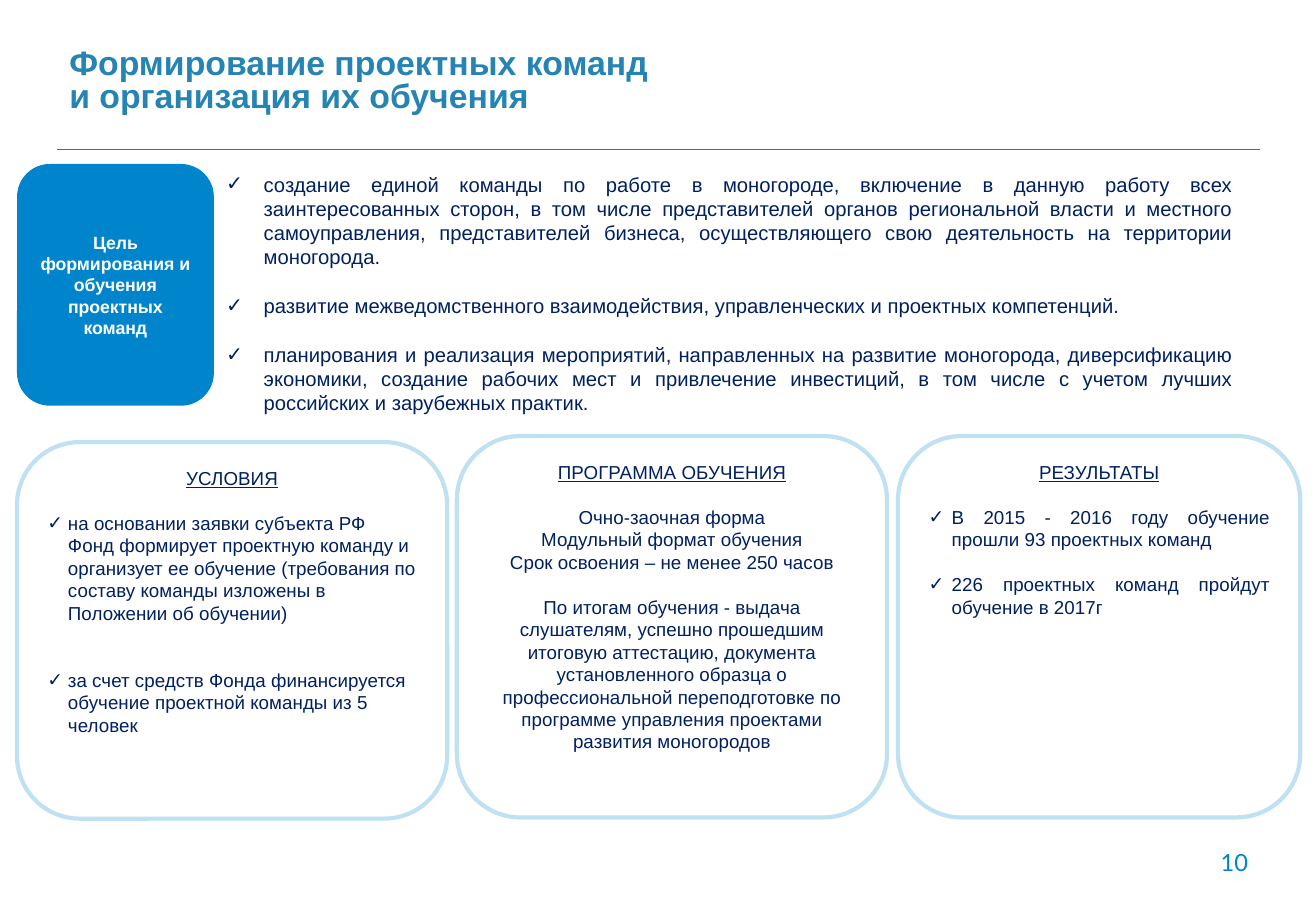
from lxml import etree
from pptx import Presentation
from pptx import util as u
from pptx.dml.color import RGBColor
from pptx.enum import shapes, text
from pptx.oxml import ns

BLUE, NAVY, PALE, WHITE = "0085CD", "002060", "BFE1F2", "FFFFFF"
LEFT, MID = text.PP_ALIGN.LEFT, text.PP_ALIGN.CENTER
RIGHT, FULL = text.PP_ALIGN.RIGHT, text.PP_ALIGN.JUSTIFY


def tint(code):
    return RGBColor.from_string(code)


class Page:
    def __init__(self, deck):
        self.slide = deck.slides.add_slide(deck.slide_layouts[1])
        self.items = self.slide.shapes
        self.face = "Arial"

    def place(self, item, spot):
        item.left, item.top, item.width, item.height = map(u.Inches, spot)

    def frame(self, item, anchor, side=0.1):
        frame = item.text_frame
        frame.word_wrap = True
        frame.auto_size = text.MSO_AUTO_SIZE.NONE
        frame.vertical_anchor = anchor
        frame.margin_left = frame.margin_right = u.Inches(side)
        frame.margin_top = frame.margin_bottom = u.Inches(0.05)
        return frame

    def run(self, para, words, size, color, bold=False, under=False, face=None):
        run = para.add_run()
        run.text = words
        font = run.font
        font.name, font.size = face or self.face, u.Pt(size)
        font.color.rgb = tint(color)
        font.bold, font.underline = bold, under

    def para(self, frame, align, gap=0, dent=0):
        first = frame.paragraphs[0]
        para = frame.add_paragraph() if first.runs else first
        para.alignment = align
        para.space_before = u.Pt(gap)
        if dent:
            props = para._p.get_or_add_pPr()
            props.set("marL", str(u.Inches(dent)))
            props.set("indent", str(-u.Inches(dent)))
            etree.SubElement(props, ns.qn("a:buFont")).set("typeface", self.face)
            etree.SubElement(props, ns.qn("a:buChar")).set("char", "✓")
        return para

    def title(self, spot, lines):
        item = self.items.title
        self.place(item, spot)
        para = self.para(self.frame(item, text.MSO_ANCHOR.TOP), LEFT)
        para.line_spacing = 0.8
        for i, line in enumerate(lines):
            if i:
                para.add_line_break()
            self.run(para, line, 20, "2584B4", bold=True)

    def goals(self, spot, lines):
        item = self.slide.placeholders[1]
        self.place(item, spot)
        frame = self.frame(item, text.MSO_ANCHOR.MIDDLE, 0.22)
        for i, line in enumerate(lines):
            self.run(self.para(frame, FULL, 14.4 if i else 0, 0.31), line, 12, NAVY)

    def rule(self, left, right, top):
        line = self.items.add_connector(
            shapes.MSO_CONNECTOR.STRAIGHT,
            *map(u.Inches, (left, top, right, top)))
        line.line.color.rgb = tint(BLUE)
        line.line.width = u.Pt(1)
        etree.SubElement(line._element.spPr, ns.qn("a:effectLst"))

    def box(self, spot, fill, edge=None):
        item = self.items.add_shape(
            shapes.MSO_SHAPE.ROUNDED_RECTANGLE, *map(u.Inches, spot))
        item.shadow.inherit = False
        item.fill.solid()
        item.fill.fore_color.rgb = tint(fill)
        if edge:
            item.line.color.rgb = tint(edge)
            item.line.width = u.Pt(2.5)
        else:
            item.line.fill.background()
        return item

    def badge(self, spot, words):
        frame = self.frame(self.box(spot, BLUE), text.MSO_ANCHOR.MIDDLE)
        self.run(self.para(frame, MID), words, 10.5, WHITE, bold=True)

    def card(self, spot, head, align, dent, rows):
        frame = self.frame(self.box(spot, WHITE, PALE), text.MSO_ANCHOR.TOP)
        self.run(self.para(frame, MID), head, 11.1, NAVY, under=True)
        for skip, words in rows:
            para = self.para(frame, align, skip * 13.3, dent)
            self.run(para, words, 11.1, NAVY)

    def number(self, spot, words):
        item = self.items.add_textbox(*map(u.Inches, spot))
        frame = self.frame(item, text.MSO_ANCHOR.MIDDLE)
        self.run(self.para(frame, RIGHT), words, 14, BLUE, face="Lato")


def main():
    deck = Presentation()
    deck.slide_width, deck.slide_height = u.Inches(10.83), u.Inches(7.5)
    page = Page(deck)
    page.rule(0.47, 10.37, 1.23)
    page.title((0.47, 0.36, 9.9, 0.87),
               ["Формирование проектных команд", "и организация их обучения"])
    page.goals((1.64, 1.21, 8.73, 2.41), [
        "создание единой команды по работе в моногороде, включение в данную "
        "работу всех заинтересованных сторон, в том числе представителей органов "
        "региональной власти и местного самоуправления, представителей бизнеса, "
        "осуществляющего свою деятельность на территории моногорода.",
        "развитие межведомственного взаимодействия, управленческих и проектных "
        "компетенций.",
        "планирования и реализация мероприятий, направленных на развитие "
        "моногорода, диверсификацию экономики, создание рабочих мест и "
        "привлечение инвестиций, в том числе с учетом лучших российских и "
        "зарубежных практик."])
    page.badge((0.14, 1.35, 1.62, 1.99),
               "Цель формирования и обучения проектных команд")
    page.card((0.14, 3.64, 3.54, 3.1), "УСЛОВИЯ", LEFT, 0.17, [
        (1, "на основании заявки субъекта РФ Фонд формирует проектную команду и "
            "организует ее обучение (требования по составу команды изложены в "
            "Положении об обучении)"),
        (2, "за счет средств Фонда финансируется обучение проектной команды из "
            "5 человек")])
    page.card((3.76, 3.59, 3.54, 3.14), "ПРОГРАММА ОБУЧЕНИЯ", MID, 0, [
        (1, "Очно-заочная форма"),
        (0, "Модульный формат обучения"),
        (0, "Срок освоения – не менее 250 часов"),
        (1, "По итогам обучения - выдача слушателям, успешно прошедшим итоговую "
            "аттестацию, документа установленного образца о профессиональной "
            "переподготовке по программе управления проектами развития "
            "моногородов")])
    page.card((7.39, 3.59, 3.31, 3.14), "РЕЗУЛЬТАТЫ", FULL, 0.19, [
        (1, "В 2015 - 2016 году обучение прошли 93 проектных команд"),
        (1, "226 проектных команд пройдут обучение в 2017г")])
    page.number((9.43, 6.98, 0.94, 0.24), "10")
    deck.save("out.pptx")


if __name__ == "__main__":
    main()
